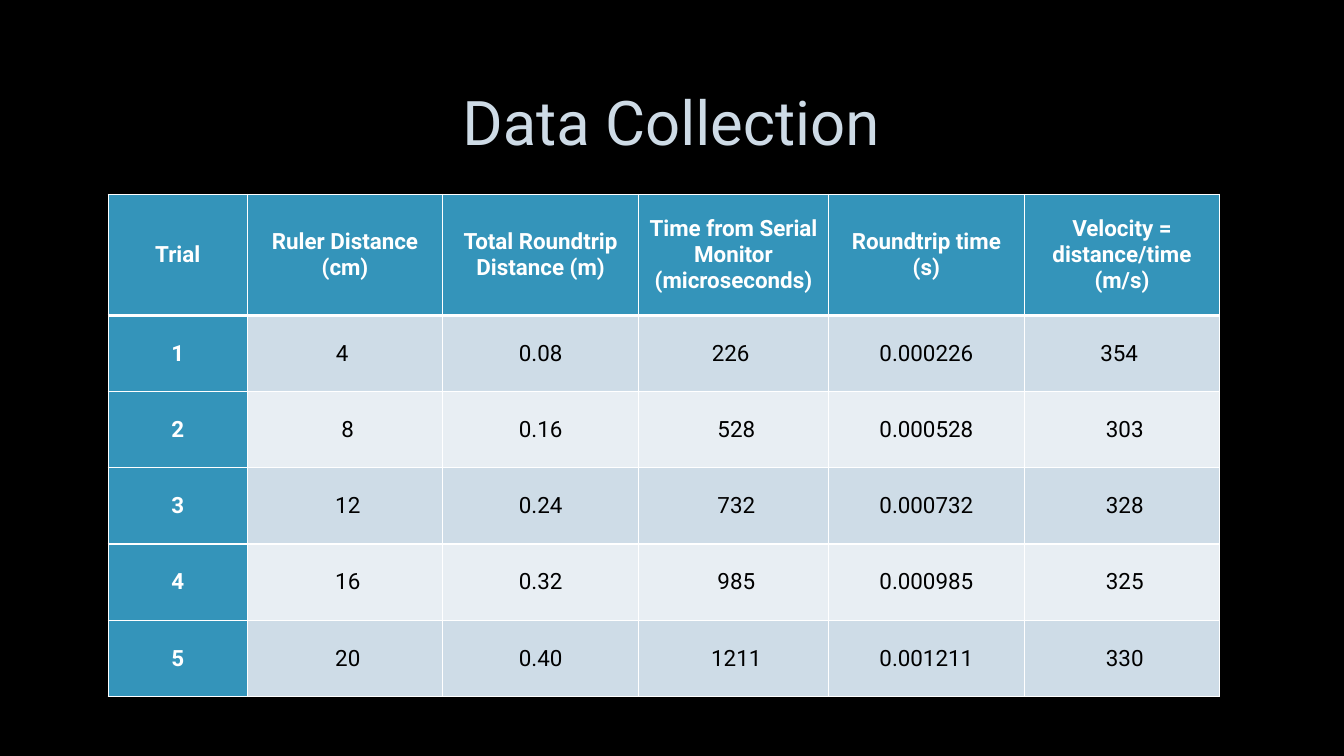
from dataclasses import dataclass

from lxml import etree
from pptx import Presentation
from pptx.dml.color import RGBColor
from pptx.enum.text import MSO_ANCHOR, PP_ALIGN
from pptx.oxml.ns import qn
from pptx.util import Cm, Pt

CENTER = PP_ALIGN.CENTER
MIDDLE = MSO_ANCHOR.MIDDLE

FONT = "Roboto"
COLORS = {
    "background": "000000",
    "title": "CEDBE6",
    "title_outline": "404040",
    "accent": "3494BA",
    "odd_row": "CEDCE7",
    "even_row": "E8EEF3",
    "light": "FFFFFF",
    "dark": "000000",
}

HEADERS = [
    "Trial",
    "Ruler Distance (cm)",
    "Total Roundtrip Distance (m)",
    "Time from Serial Monitor (microseconds)",
    "Roundtrip time (s)",
    "Velocity = distance/time (m/s)",
]
COLUMN_WIDTHS = [3.5, 4.93, 4.93, 4.79, 4.93, 4.93]
HEADER_HEIGHT = 3.05
TRIAL_HEIGHT = 1.92


@dataclass(frozen=True)
class Trial:
    number: str
    ruler: str
    roundtrip: str
    microseconds: str
    seconds: str
    velocity: str

    def values(self) -> list[str]:
        return [self.number, self.ruler, self.roundtrip,
                self.microseconds, self.seconds, self.velocity]


@dataclass(frozen=True)
class CellStyle:
    fill: str
    text: str
    bold: bool


TRIALS = [
    Trial("1", "4 ", "0.08", "226 ", "0.000226", "354 "),
    Trial("2", " 8", "0.16", " 528", "0.000528", " 303"),
    Trial("3", " 12", "0.24", " 732", "0.000732", " 328"),
    Trial("4", " 16", "0.32", " 985", "0.000985", " 325"),
    Trial("5", " 20", "0.40", " 1211", "0.001211", " 330"),
]
HEADING = CellStyle("accent", "light", True)
BANDS = [CellStyle("odd_row", "dark", False), CellStyle("even_row", "dark", False)]


def rgb(name: str) -> RGBColor:
    return RGBColor.from_string(COLORS[name])


def make_line(tag: str, color: str, points: float):
    """Return a solid line element and its colour element."""
    line = etree.Element(qn(tag), w=str(Pt(points)))
    fill = etree.SubElement(line, qn("a:solidFill"))
    return line, etree.SubElement(fill, qn("a:srgbClr"), val=COLORS[color])


def add_span(para, text: str, size: float, color: str, bold: bool = False):
    para.alignment = CENTER
    span = para.add_run()
    span.text = text
    span.font.name = FONT
    span.font.size = Pt(size)
    span.font.bold = bold
    span.font.color.rgb = rgb(color)
    return span


def add_title(page, text: str) -> None:
    box = page.shapes.title
    box.left, box.top, box.width, box.height = Cm(2.54), Cm(1.7), Cm(28.75), Cm(2.69)
    box.text_frame.vertical_anchor = MIDDLE
    box.text_frame.word_wrap = True
    span = add_span(box.text_frame.paragraphs[0], text, 44, "title")
    # Faint outline around the letters
    outline, color = make_line("a:ln", "title_outline", 0.75)
    etree.SubElement(color, qn("a:alpha"), val="10000")
    span.font._element.insert(0, outline)


def format_cell(cell, text: str, style: CellStyle, top: float, bottom: float) -> None:
    cell.vertical_anchor = MIDDLE
    cell.margin_left = cell.margin_right = Cm(0.18)
    cell.margin_top = cell.margin_bottom = 0
    cell.fill.solid()
    cell.fill.fore_color.rgb = rgb(style.fill)
    add_span(cell.text_frame.paragraphs[0], text, 16, style.text, style.bold)
    # Borders come before the fill
    widths = {"a:lnL": 1, "a:lnR": 1, "a:lnT": top, "a:lnB": bottom}
    for index, (tag, points) in enumerate(widths.items()):
        line, _ = make_line(tag, "light", points)
        cell._tc.tcPr.insert(index, line)


def add_trials_table(page) -> None:
    rows = [HEADERS] + [trial.values() for trial in TRIALS]
    heights = [HEADER_HEIGHT] + [TRIAL_HEIGHT] * len(TRIALS)
    frame = page.shapes.add_table(len(rows), len(HEADERS), Cm(2.73), Cm(4.9),
                                  Cm(sum(COLUMN_WIDTHS)), Cm(sum(heights)))
    table = frame.table
    table.first_col = True
    for column, width in zip(table.columns, COLUMN_WIDTHS):
        column.width = Cm(width)
    for r, (values, height) in enumerate(zip(rows, heights)):
        table.rows[r].height = Cm(height)
        # A thick rule separates the header from the trials
        top = 3 if r == 1 else 1
        bottom = 3 if r == 0 else 1
        for c, text in enumerate(values):
            style = HEADING if r == 0 or c == 0 else BANDS[(r - 1) % 2]
            format_cell(table.cell(r, c), text, style, top, bottom)


def main() -> None:
    deck = Presentation()
    deck.slide_width, deck.slide_height = Cm(33.87), Cm(19.05)
    page = deck.slides.add_slide(deck.slide_layouts[5])
    page.background.fill.solid()
    page.background.fill.fore_color.rgb = rgb("background")
    add_title(page, "Data Collection")
    add_trials_table(page)
    deck.save("out.pptx")


if __name__ == "__main__":
    main()
